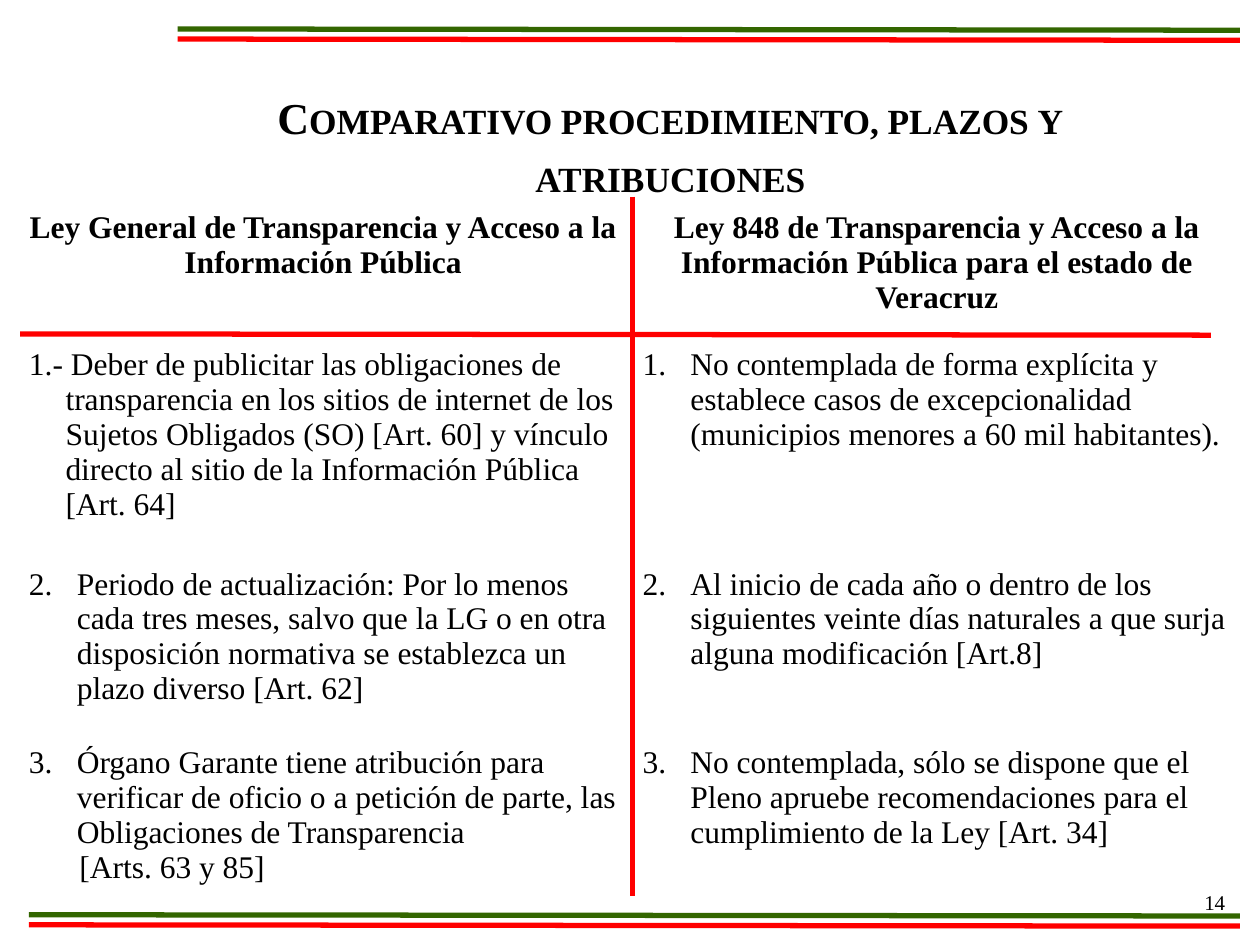
"""Build the slide comparing the General Transparency Law with Law 848 of Veracruz."""
from dataclasses import dataclass

from lxml.etree import SubElement
from pptx import Presentation
from pptx.dml.color import RGBColor
from pptx.enum.shapes import MSO_CONNECTOR
from pptx.enum.text import PP_ALIGN
from pptx.oxml.ns import qn
from pptx.util import Inches, Pt


@dataclass(frozen=True)
class Theme:
    font: str = "Times New Roman"
    ink: RGBColor = RGBColor(0x00, 0x00, 0x00)
    red: RGBColor = RGBColor(0xFF, 0x00, 0x00)
    green: RGBColor = RGBColor(0x33, 0x66, 0x00)
    border: str = "FFFFFF"
    title: Pt = Pt(25.2)
    body: Pt = Pt(18)
    number: Pt = Pt(12)
    rule: Pt = Pt(3)


theme = Theme()


def write(para, text, size, bold=False, **layout):
    for name, value in layout.items():
        setattr(para, name, value)
    span = para.add_run()
    span.text = text
    for name, value in {"name": theme.font, "size": size, "bold": bold}.items():
        setattr(span.font, name, value)
    span.font.color.rgb = theme.ink
    return span


def draw_rule(shapes, start, end, color):
    points = [Inches(value) for value in (*start, *end)]
    line = shapes.add_connector(MSO_CONNECTOR.STRAIGHT, *points)
    line.line.color.rgb = color
    line.line.width = theme.rule
    SubElement(line._element.spPr, qn("a:effectLst"))


deck = Presentation()
deck.slide_width, deck.slide_height = Inches(10), Inches(7.5)
page = deck.slides.add_slide(deck.slide_layouts[6])

title_box = page.shapes.add_textbox(Inches(1.5), Inches(0.63), Inches(7.64), Inches(0.77))
title_box.text_frame.word_wrap = True
title = write(
    title_box.text_frame.paragraphs[0],
    "Comparativo procedimiento, plazos y atribuciones",
    theme.title, bold=True, alignment=PP_ALIGN.CENTER, line_spacing=1.09,
)
title._r.get_or_add_rPr().set("cap", "small")

headings = [
    "Ley General de Transparencia y Acceso a la Información Pública",
    "Ley 848 de Transparencia y Acceso a la Información Pública para el estado de Veracruz",
]
comparisons = [
    [
        "1.- Deber de publicitar las obligaciones de transparencia en los sitios de internet "
        "de los Sujetos Obligados (SO) [Art. 60] y vínculo directo al sitio de la "
        "Información Pública [Art. 64]",
        "No contemplada de forma explícita y establece casos de excepcionalidad "
        "(municipios menores a 60 mil habitantes).",
    ],
    [
        "Periodo de actualización: Por lo menos cada tres meses, salvo que la LG o en otra "
        "disposición normativa se establezca un plazo diverso [Art. 62]",
        "Al inicio de cada año o dentro de los siguientes veinte días naturales a que surja "
        "alguna modificación [Art.8]",
    ],
    [
        "Órgano Garante tiene atribución para verificar de oficio o a petición de parte, las "
        "Obligaciones de Transparencia",
        "No contemplada, sólo se dispone que el Pleno apruebe recomendaciones para el "
        "cumplimiento de la Ley [Art. 34]",
    ],
]
row_heights = [1.09, 1.74, 1.42, 1.42]

table = page.shapes.add_table(
    len(row_heights), len(headings),
    Inches(0.13), Inches(1.62), Inches(9.74), Inches(sum(row_heights)),
).table
table.first_row = table.horz_banding = False
for row, height in zip(table.rows, row_heights):
    row.height = Inches(height)

for row_index, texts in enumerate([headings, *comparisons]):
    for column_index, text in enumerate(texts):
        cell = table.cell(row_index, column_index)
        cell_properties = cell._tc.get_or_add_tcPr()
        for side in ("L", "R", "T", "B"):
            heavy = (row_index, side) in ((0, "B"), (1, "T"))
            edge = SubElement(cell_properties, qn(f"a:ln{side}"), w=str(Pt(3 if heavy else 1)))
            fill = SubElement(edge, qn("a:solidFill"))
            SubElement(fill, qn("a:srgbClr"), val=theme.border)
        cell.fill.background()

        para = cell.text_frame.paragraphs[0]
        if row_index == 0:
            write(para, text, theme.body, bold=True, alignment=PP_ALIGN.CENTER)
            continue
        typed_number = text.startswith("1.-")
        hang = Inches(0.29 if typed_number else 0.38)
        properties = para._p.get_or_add_pPr()
        for name, value in {"marL": hang, "indent": -hang}.items():
            properties.set(name, str(value))
        if not typed_number:
            SubElement(properties, qn("a:buAutoNum"), type="arabicPeriod", startAt=str(row_index))
        write(para, text, theme.body)

citation = table.cell(3, 0).text_frame.add_paragraph()
citation._p.get_or_add_pPr().set("indent", str(Inches(0.4)))
write(citation, "[Arts. 63 y 85]", theme.body)

number_box = page.shapes.add_textbox(Inches(9.46), Inches(7.01), Inches(0.4), Inches(0.4))
number_box.text_frame.word_wrap = True
write(number_box.text_frame.paragraphs[0], "14", theme.number)

frame = page.shapes.add_group_shape()
for left, top in ((1.41, 0.23), (0.23, 7.26)):
    for offset, color in ((0.08, theme.red), (0, theme.green)):
        draw_rule(frame.shapes, (left, top + offset), (9.84, top + offset + 0.01), color)

draw_rule(page.shapes, (5.02, 1.56), (5.02, 7.11), theme.red)
draw_rule(page.shapes, (9.61, 2.66), (0.16, 2.65), theme.red)

deck.save("out.pptx")
